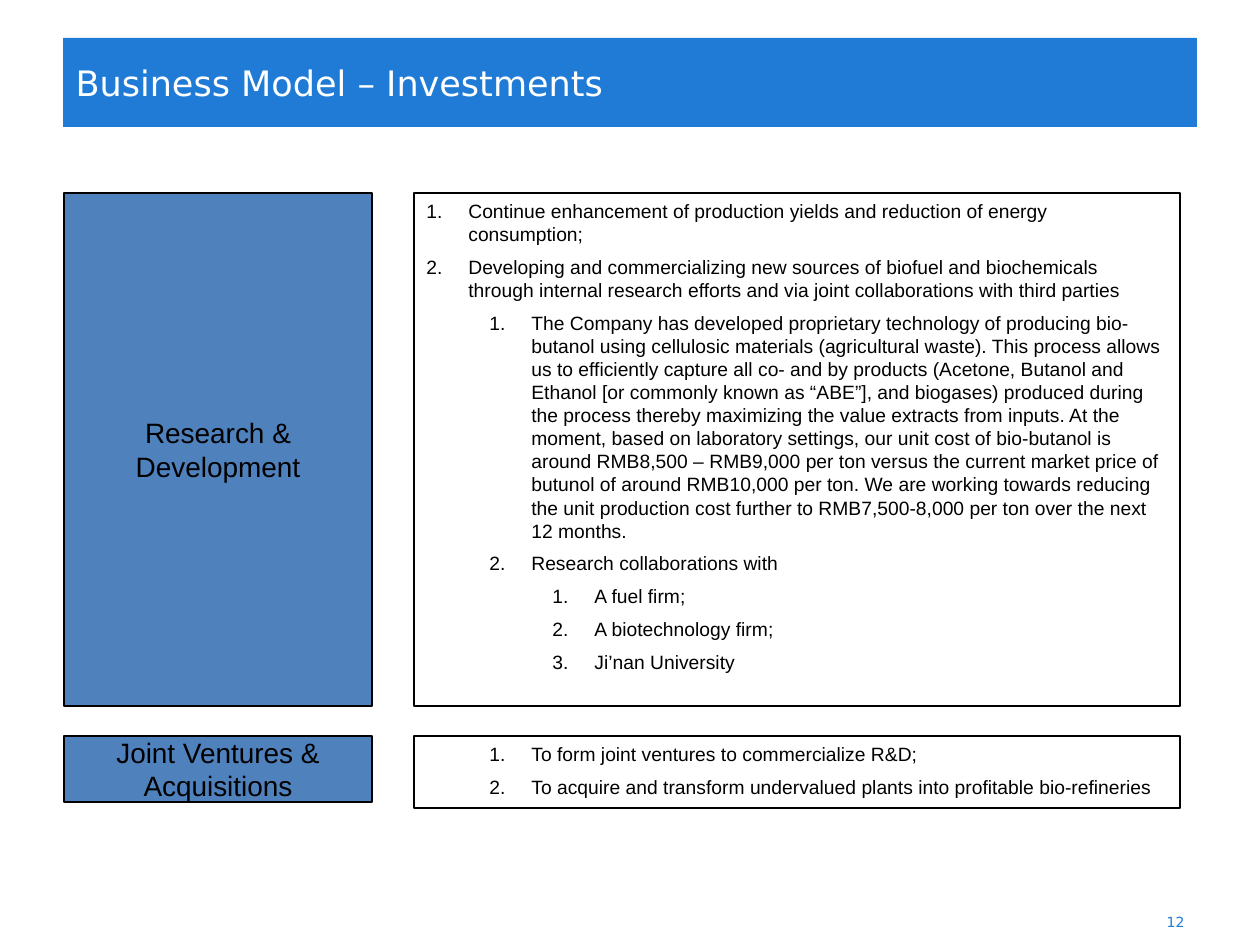
from lxml import etree
from pptx import Presentation
from pptx import util as u
from pptx.dml.color import RGBColor
from pptx.enum import shapes, text
from pptx.oxml.ns import qn

PX_PER_INCH = 126
COLORS = {"blue": "1F7BD6", "label": "4F81BD", "black": "000000", "white": "FFFFFF"}
HEADING_FONT, BODY_FONT = "DejaVu Sans", "Arial"
LABEL_LEFT, LABEL_WIDTH = 64, 308
LIST_LEFT, LIST_WIDTH = 414, 766
INDENT, LEVEL_STEP = 42, 63

RESEARCH = [
    (0, "Continue enhancement of production yields and reduction of energy consumption;"),
    (0, "Developing and commercializing new sources of biofuel and biochemicals through "
        "internal research efforts and via joint collaborations with third parties"),
    (1, "The Company has developed proprietary technology of producing bio-butanol using "
        "cellulosic materials (agricultural waste). This process allows us to efficiently "
        "capture all co- and by products (Acetone, Butanol and Ethanol [or commonly known as "
        "“ABE”], and biogases) produced during the process thereby maximizing the value "
        "extracts from inputs. At the moment, based on laboratory settings, our unit cost of "
        "bio-butanol is around RMB8,500 – RMB9,000 per ton versus the current market price of "
        "butunol of around RMB10,000 per ton. We are working towards reducing the unit "
        "production cost further to RMB7,500-8,000 per ton over the next 12 months."),
    (1, "Research collaborations with"),
    (2, "A fuel firm;"),
    (2, "A biotechnology firm;"),
    (2, "Ji’nan University"),
]
VENTURES = [
    (1, "To form joint ventures to commercialize R&D;"),
    (1, "To acquire and transform undervalued plants into profitable bio-refineries"),
]
# top, label height, list height, label lines, list items
SECTIONS = [
    (193, 513, 513, ["Research &", "Development"], RESEARCH),
    (736, 66, 72, ["Joint Ventures &", "Acquisitions"], VENTURES),
]


def px(length):
    return u.Emu(round(length * 914400 / PX_PER_INCH))


def color(name):
    return RGBColor.from_string(COLORS[name])


def add_span(para, words, size, font, color_name):
    span = para.add_run()
    span.text = words
    span.font.size = u.Pt(size)
    span.font.name = font
    span.font.color.rgb = color(color_name)


def add_box(page, left, top, width, height, fill=None):
    box = page.shapes.add_shape(shapes.MSO_SHAPE.RECTANGLE,
                                px(left), px(top), px(width), px(height))
    box.shadow.inherit = False
    if fill:
        box.fill.solid()
        box.fill.fore_color.rgb = color(fill)
    else:
        box.fill.background()
    box.line.color.rgb = color("black")
    box.line.width = u.Pt(0.75)
    return box


def paragraphs(frame, items):
    """Yield each item with its paragraph, using the frame's first one first."""
    for index, item in enumerate(items):
        yield (frame.add_paragraph() if index else frame.paragraphs[0]), item


def add_label(page, top, height, lines):
    frame = add_box(page, LABEL_LEFT, top, LABEL_WIDTH, height, "label").text_frame
    frame.word_wrap = False
    frame.vertical_anchor = text.MSO_ANCHOR.MIDDLE
    for para, line in paragraphs(frame, lines):
        para.alignment = text.PP_ALIGN.CENTER
        add_span(para, line, 16, BODY_FONT, "black")


def number_paragraph(para, level):
    para.level = level
    props = para._p.get_or_add_pPr()
    props.set("marL", str(px(INDENT + level * LEVEL_STEP)))
    props.set("indent", str(-px(INDENT)))
    etree.SubElement(props, qn("a:buFont"), typeface="+mj-lt")
    etree.SubElement(props, qn("a:buAutoNum"), type="arabicPeriod")


def add_numbered_list(page, top, height, items):
    frame = add_box(page, LIST_LEFT, top, LIST_WIDTH, height).text_frame
    frame.word_wrap = True
    frame.vertical_anchor = text.MSO_ANCHOR.TOP
    for para, (level, words) in paragraphs(frame, items):
        number_paragraph(para, level)
        para.alignment = text.PP_ALIGN.LEFT
        if para._p is not frame.paragraphs[0]._p:
            para.space_before = u.Pt(5.5)
        add_span(para, words, 11, BODY_FONT, "black")


def set_title(page, words):
    title = page.shapes.title
    title.left, title.top, title.width, title.height = px(63), px(38), px(1134), px(89)
    title.fill.solid()
    title.fill.fore_color.rgb = color("blue")
    frame = title.text_frame
    frame.auto_size = text.MSO_AUTO_SIZE.NONE
    frame.vertical_anchor = text.MSO_ANCHOR.MIDDLE
    para = frame.paragraphs[0]
    para.alignment = text.PP_ALIGN.LEFT
    add_span(para, words, 20, HEADING_FONT, "white")


def add_page_number(page, number):
    box = page.shapes.add_textbox(px(903), px(897), px(294), px(50))
    frame = box.text_frame
    frame.word_wrap = True
    frame.vertical_anchor = text.MSO_ANCHOR.MIDDLE
    para = frame.paragraphs[0]
    para.alignment = text.PP_ALIGN.RIGHT
    add_span(para, number, 8, HEADING_FONT, "blue")


def main():
    deck = Presentation()
    deck.slide_width, deck.slide_height = px(1260), px(945)
    page = deck.slides.add_slide(deck.slide_layouts[5])
    set_title(page, "Business Model – Investments")
    add_page_number(page, "12")
    for top, label_height, list_height, lines, items in SECTIONS:
        add_label(page, top, label_height, lines)
        add_numbered_list(page, top, list_height, items)
    deck.save("out.pptx")


if __name__ == "__main__":
    main()
